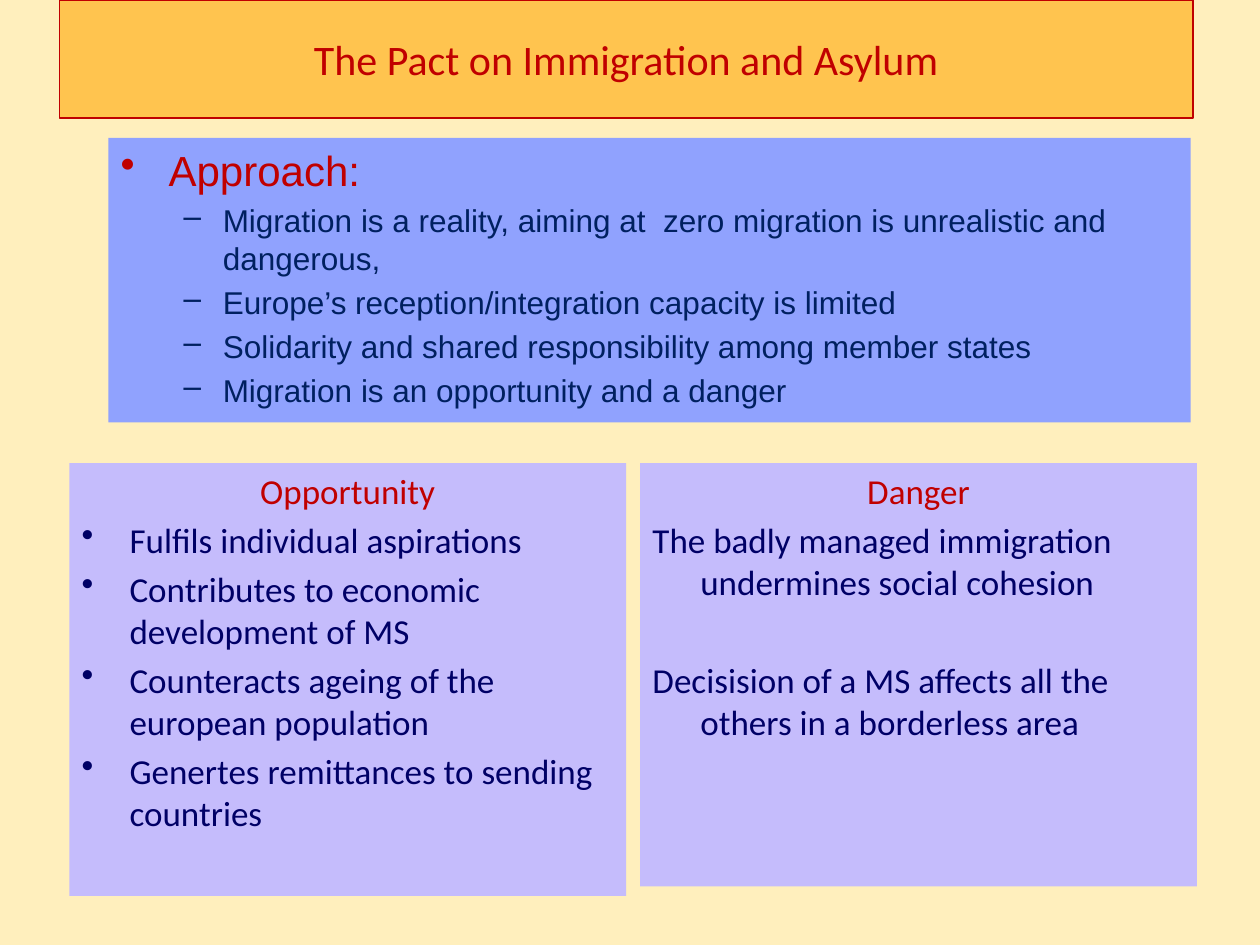
from lxml.etree import SubElement
from pptx import Presentation
from pptx.dml.color import RGBColor
from pptx.enum.shapes import MSO_SHAPE
from pptx.enum.text import MSO_ANCHOR, PP_ALIGN
from pptx.oxml.ns import qn
from pptx.util import Inches, Pt

WIDE, HIGH = Inches(10), Inches(7.5)

CREAM = RGBColor(0xFF, 0xEF, 0xBD)
GOLD = RGBColor(0xFF, 0xC4, 0x4F)
BLUE = RGBColor(0x90, 0xA2, 0xFE)
LILAC = RGBColor(0xC5, 0xBC, 0xFC)
RED = RGBColor(0xC0, 0x00, 0x00)
NAVY = RGBColor(0x00, 0x20, 0x60)
INK = RGBColor(0x00, 0x00, 0x66)

# Left margin and first-line indent of each list level, in inches
INDENTS = ((0.38, -0.38), (0.81, -0.31))


def add_box(slide, left, top, width, height, fill, line=None):
    """Add a filled box, placed by shares of the slide; return its text frame."""
    box = slide.shapes.add_shape(
        MSO_SHAPE.RECTANGLE,
        int(left * WIDE), int(top * HIGH), int(width * WIDE), int(height * HIGH))
    box.shadow.inherit = False
    box.fill.solid()
    box.fill.fore_color.rgb = fill
    if line is None:
        box.line.fill.background()
    else:
        box.line.color.rgb = line
        box.line.width = Pt(0.75)
    frame = box.text_frame
    frame.word_wrap = True
    frame.vertical_anchor = MSO_ANCHOR.TOP
    return frame


def add_text(frame, text, size, color, face="Calibri", level=None, mark=None,
             align=PP_ALIGN.LEFT, gap=0.2):
    """Write one paragraph; gap is the space before as a share of the size."""
    first = frame.paragraphs[0]
    para = frame.add_paragraph() if first.runs else first
    para.add_run().text = text
    para.alignment = align
    para.space_before = Pt(gap * size)
    props = para._p.get_or_add_pPr()
    if level is not None:
        para.level = level
        left, hang = INDENTS[level]
        props.set("marL", str(Inches(left)))
        props.set("indent", str(Inches(hang)))
    if mark:
        SubElement(props, qn("a:buChar")).set("char", mark)
    font = para.font
    font.size, font.name = Pt(size), face
    font.color.rgb = color


def add_panel(slide, left, height, head):
    """Add one of the two lower panels with its centred heading."""
    frame = add_box(slide, left, 0.49, 0.442, height, LILAC)
    add_text(frame, head, 20, RED, level=0, align=PP_ALIGN.CENTER)
    return frame


def main():
    deck = Presentation()
    deck.slide_width, deck.slide_height = WIDE, HIGH
    slide = deck.slides.add_slide(deck.slide_layouts[6])
    slide.background.fill.solid()
    slide.background.fill.fore_color.rgb = CREAM

    # Title bar
    title = add_box(slide, 0.047, 0, 0.9, 0.125, GOLD, RED)
    title.vertical_anchor = MSO_ANCHOR.MIDDLE
    add_text(title, "The Pact on Immigration and Asylum", 24, RED,
             align=PP_ALIGN.CENTER, gap=0)

    # Left panel: opportunity
    good = add_panel(slide, 0.055, 0.458, "Opportunity")
    for text in ("Fulfils individual aspirations",
                 "Contributes to economic development of MS",
                 "Counteracts ageing of the european population",
                 "Genertes remittances to sending countries"):
        add_text(good, text, 20, INK, level=0, mark="•")

    # Right panel: danger, with a wide gap between its two points
    bad = add_panel(slide, 0.508, 0.448, "Danger")
    add_text(bad, "The badly managed immigration undermines social cohesion",
             20, INK, level=0)
    add_text(bad, "Decisision of a MS affects all the others in a borderless area",
             20, INK, level=0, gap=1.6)

    # Approach
    plan = add_box(slide, 0.086, 0.146, 0.859, 0.301, BLUE)
    add_text(plan, "Approach:", 24, RED, "Arial", level=0, mark="•")
    for text in ("Migration is a reality, aiming at  zero migration is "
                 "unrealistic and dangerous,",
                 "Europe’s reception/integration capacity is limited",
                 "Solidarity and shared responsibility among member states",
                 "Migration is an opportunity and a danger"):
        add_text(plan, text, 18, NAVY, "Arial", level=1, mark="–")

    deck.save("out.pptx")


if __name__ == "__main__":
    main()
